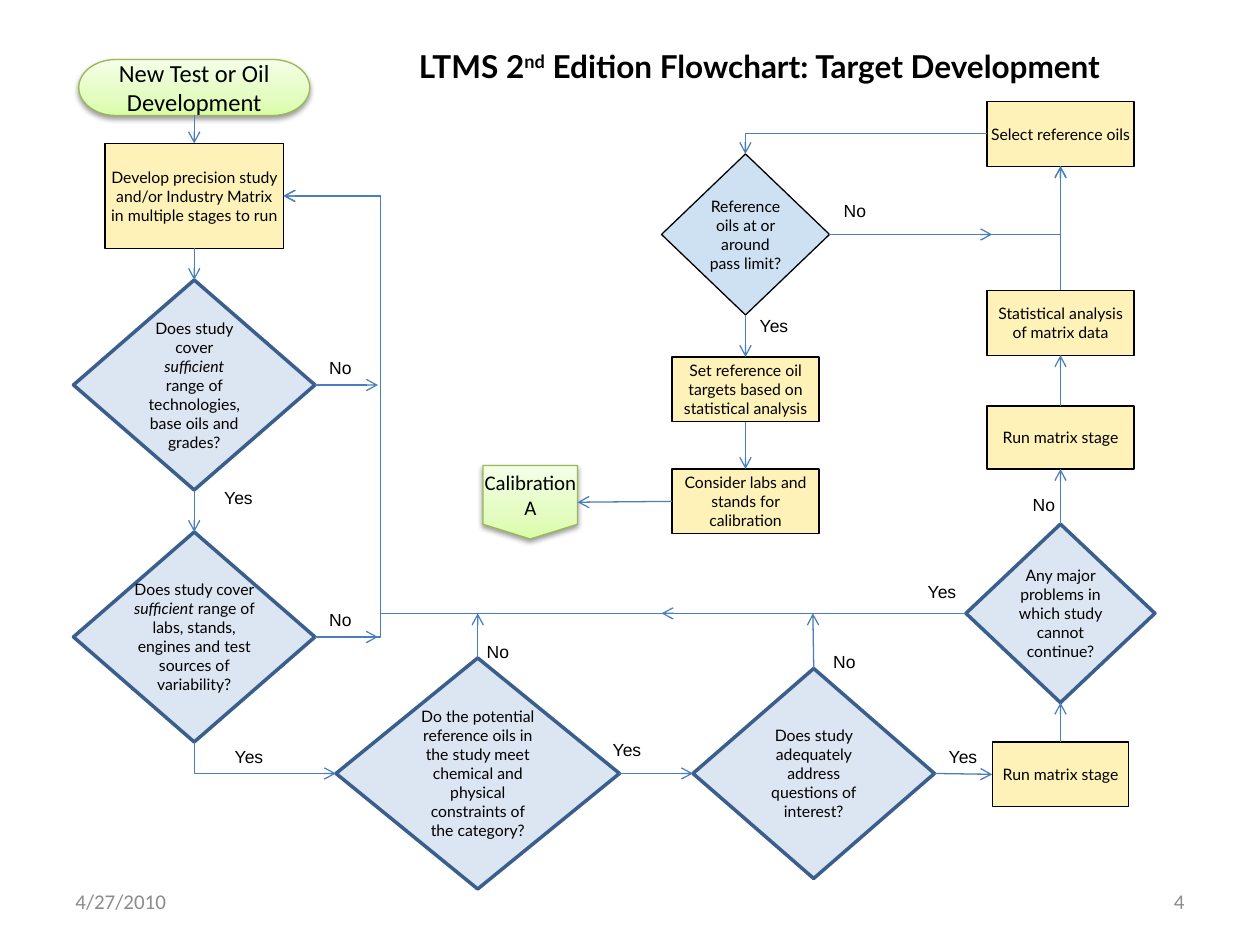
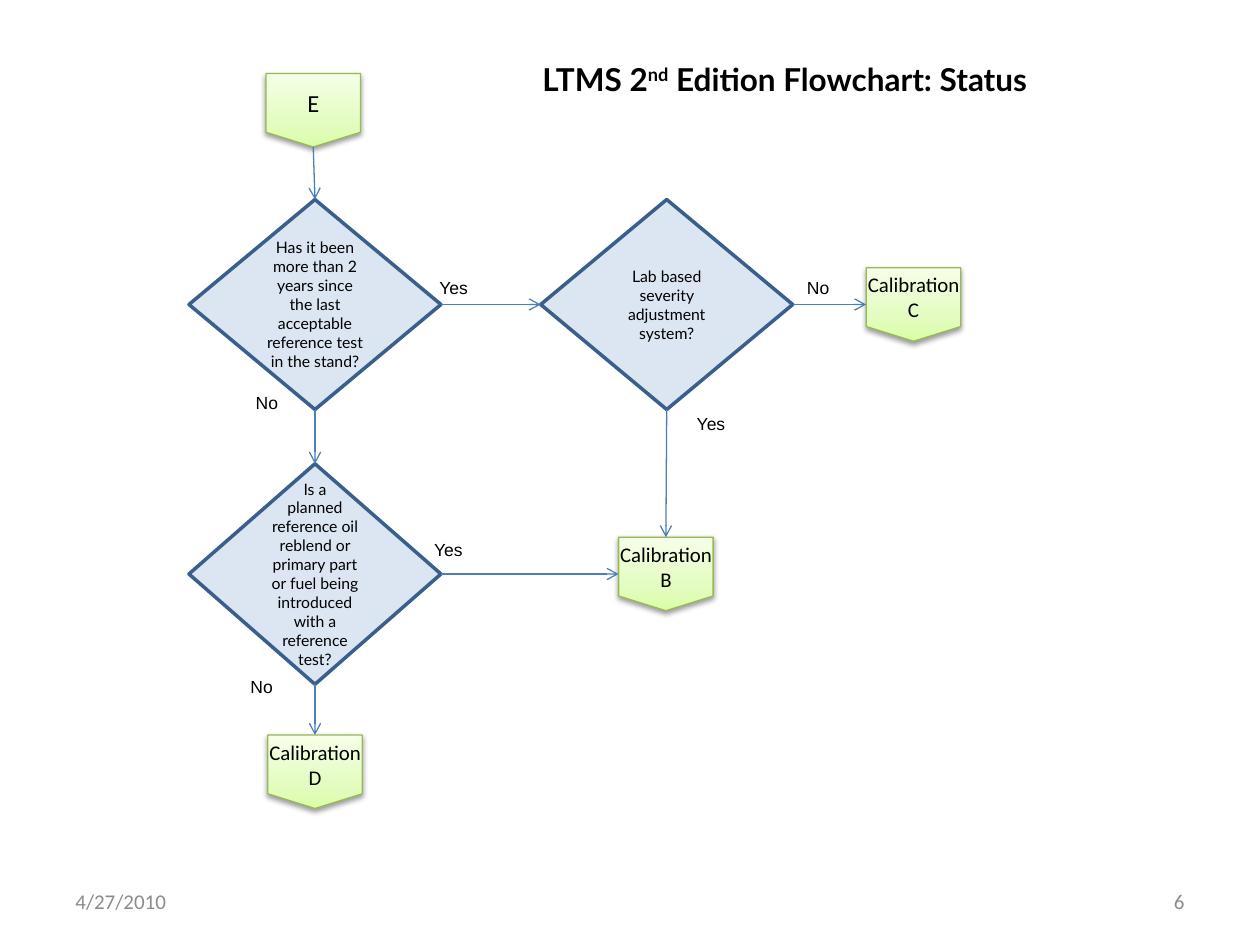
import dataclasses

import pptx
import pptx.dml.color
import pptx.enum.shapes
import pptx.enum.text
import pptx.oxml.ns
import pptx.util
from lxml import etree

Pt = pptx.util.Pt
qn = pptx.oxml.ns.qn
Kind = pptx.enum.shapes.MSO_SHAPE
Wire = pptx.enum.shapes.MSO_CONNECTOR
Align = pptx.enum.text.PP_ALIGN
Anchor = pptx.enum.text.MSO_ANCHOR

TOP, LEFT, BASE, RIGHT = range(4)


@dataclasses.dataclass(frozen=True)
class Theme:
    ink: str = "000000"
    paper: str = "FFFFFF"
    grey: str = "8C8C8C"
    wire: str = "4B7EBC"
    step: str = "FFF2B9"
    ask: str = "DCE6F2"
    edge: str = "3A5F8C"
    limit: str = "CEE1F2"
    rim: str = "98B955"
    green: tuple = ((0, "DAFDA7"), (35, "E4FCC2"), (100, "F5FFE7"))
    body: str = "Lato"
    port: str = "Calibri"
    tag: str = "Arial"
    head_size: float = 18
    port_size: float = 14
    exit_size: float = 11.9
    foot_size: float = 12
    tag_size: float = 10
    body_size: float = 9
    thin: float = 0.75
    thick: float = 2


THEME = Theme()
WIDE = (7.2, 3.6, 7.2, 3.6)
SNUG = (2.16, 1.44, 2.16, 1.44)
NONE = (0, 0, 0, 0)


def rgb(code):
    return pptx.dml.color.RGBColor.from_string(code)


def write(shape, text, font=THEME.body, size=THEME.body_size, color=THEME.ink,
          bold=False, mark="i", align=Align.CENTER, anchor=Anchor.MIDDLE, pad=WIDE):
    """Fill a shape with text; *starred* parts are italic or, with mark="sup", raised."""
    frame = shape.text_frame
    frame.word_wrap = True
    frame.vertical_anchor = anchor
    (frame.margin_left, frame.margin_top,
     frame.margin_right, frame.margin_bottom) = map(Pt, pad)
    for row, line in enumerate(text.split("\n")):
        para = frame.add_paragraph() if row else frame.paragraphs[0]
        para.alignment = align
        for spot, part in enumerate(line.split("*")):
            run = para.add_run()
            run.text = part
            run.font.name, run.font.size, run.font.bold = font, Pt(size), bold
            run.font.color.rgb = rgb(color)
            if spot % 2 and mark == "sup":
                run._r.get_or_add_rPr().set("baseline", "30000")
            elif spot % 2:
                run.font.italic = True


def block(slide, kind, box, fill=None, line=None, width=THEME.thin):
    shape = slide.shapes.add_shape(kind, *map(Pt, box))
    shape.shadow.inherit = False
    if fill:
        shape.fill.solid()
        shape.fill.fore_color.rgb = rgb(fill)
    if line:
        shape.line.color.rgb = rgb(line)
        shape.line.width = Pt(width)
    else:
        shape.line.fill.background()
    return shape


def note(slide, text, box, **style):
    write(slide.shapes.add_textbox(*map(Pt, box)), text, **style)


def tags(slide, text, *spots):
    """Put the same branch answer at several places."""
    for x, y in spots:
        note(slide, text, (x, y, 28.8, 14.4), font=THEME.tag, size=THEME.tag_size,
             align=Align.LEFT, anchor=Anchor.TOP, pad=(2.16, 2.16, 0, 0))


def step(slide, text, x, y, w=84, h=37):
    shape = block(slide, Kind.FLOWCHART_PROCESS, (x, y, w, h), THEME.step, THEME.ink)
    write(shape, text, pad=SNUG)
    return shape


def ask(slide, text, x, y, w=138, h=120, pad=WIDE,
        fill=THEME.ask, line=THEME.edge, width=THEME.thick):
    shape = block(slide, Kind.FLOWCHART_DECISION, (x, y, w, h), fill, line, width)
    write(shape, text, pad=pad)
    return shape


def port(slide, text, x, y, w=54, h=42, kind=Kind.FLOWCHART_OFFPAGE_CONNECTOR,
         size=THEME.port_size, pad=WIDE):
    """Green entry or exit sign with a gradient and a soft shadow."""
    shape = block(slide, kind, (x, y, w, h), line=THEME.rim)
    shape.fill.gradient()
    shape.fill.gradient_angle = 90
    props = shape._element.spPr
    stops = next(props.iter(qn("a:gsLst")))
    for stop in list(stops):
        stops.remove(stop)
    for place, code in THEME.green:
        stop = etree.SubElement(stops, qn("a:gs"), pos=str(place * 1000))
        etree.SubElement(stop, qn("a:srgbClr"), val=code)
    shade = etree.SubElement(
        props.find(qn("a:effectLst")), qn("a:outerShdw"), blurRad=str(Pt(3.1)),
        dist=str(Pt(1.6)), dir="5400000", rotWithShape="0")
    tint = etree.SubElement(shade, qn("a:srgbClr"), val=THEME.ink)
    etree.SubElement(tint, qn("a:alpha"), val="38000")
    write(shape, text, font=THEME.port, size=size, pad=pad)
    return shape


def leave(slide, name, x, y):
    return port(slide, "Calibration\n" + name, x, y, size=THEME.exit_size, pad=NONE)


def link(slide, start, end, corner=False, turn=None, tip="tailEnd"):
    """Join two (shape, side) pairs; end may also be an (x, y) point.

    corner bends the line once, turn is the x of a line that bends twice.
    """
    kind = Wire.ELBOW if corner or turn else Wire.STRAIGHT
    wire = slide.shapes.add_connector(kind, 0, 0, 0, 0)
    wire.begin_connect(*start)
    if isinstance(end[0], (int, float)):
        wire.end_x, wire.end_y = map(Pt, end)
    else:
        wire.end_connect(*end)
    wire.line.color.rgb = rgb(THEME.wire)
    wire.line.width = Pt(THEME.thin)
    props = wire._element.spPr
    etree.SubElement(props.find(qn("a:ln")), qn("a:" + tip), type="arrow")
    etree.SubElement(props, qn("a:effectLst"))
    shape = props.find(qn("a:prstGeom"))
    if corner:
        shape.set("prst", "bentConnector2")
    if turn:
        share = (Pt(turn) - wire.begin_x) / (wire.end_x - wire.begin_x)
        guides = shape.find(qn("a:avLst"))
        if guides is None:
            guides = etree.SubElement(shape, qn("a:avLst"))
        etree.SubElement(guides, qn("a:gd"), name="adj1",
                         fmla=f"val {round(share * 100000)}")


def chain(slide, side, back, *shapes):
    """Link each shape to the next, out of one side and in at the other."""
    for one, two in zip(shapes, shapes[1:]):
        link(slide, (one, side), (two, back))


def begin(deck, topic, box, number):
    """Add a slide with its title, date and number."""
    slide = deck.slides.add_slide(deck.slide_layouts[6])
    title = block(slide, Kind.RECTANGLE, box, THEME.paper)
    write(title, "LTMS 2*nd* Edition Flowchart: " + topic, size=THEME.head_size,
          bold=True, mark="sup", pad=(3.6, 2.88, 3.6, 2.88))
    for text, x, align in (("4/27/2010", 36, Align.LEFT), (number, 516, Align.RIGHT)):
        note(slide, text, (x, 500.5, 168, 28.5), font=THEME.port,
             size=THEME.foot_size, color=THEME.grey, align=align)
    return slide


def target(deck):
    slide = begin(deck, "Target Development", (171.5, 24.5, 525, 26), "4")
    loop, lane = 217.5, 350.5

    start = port(slide, "New Test or Oil Development", 45, 34, 132, 32,
                 kind=Kind.FLOWCHART_TERMINATOR)
    study = step(slide, "Develop precision study and/or Industry Matrix "
                 "in multiple stages to run", 60, 82, 102, 60)
    tech = ask(slide, "Does study cover *sufficient* range of technologies, "
               "base oils and grades?", 42, 160)
    labs = ask(slide, "Does study cover *sufficient* range of labs, stands, engines "
               "and test sources of variability?", 42, 304, pad=NONE)
    oils = ask(slide, "Do the potential reference oils in the study meet chemical and "
               "physical constraints of the category?", 192, 376, 162, 132)
    goals = ask(slide, "Does study adequately address questions of interest?", 396, 382)
    first = step(slide, "Run matrix stage", 567, 424, 78)
    faults = ask(slide, "Any major problems in which study cannot continue?",
                 552, 299.5, 108, 102, pad=(0, 3.6, 0, 3.6))
    stage = step(slide, "Run matrix stage", 564, 232, h=36)
    stats = step(slide, "Statistical analysis of matrix data", 564, 166)
    select = step(slide, "Select reference oils", 564, 58)
    limit = ask(slide, "Reference oils at or around pass limit?", 378, 88, 96, 92,
                pad=SNUG, fill=THEME.limit, line=THEME.ink, width=THEME.thin)
    goal = step(slide, "Set reference oil targets based on statistical analysis",
                384, 204)
    stands = step(slide, "Consider labs and stands for calibration", 384, 268)
    out = leave(slide, "A", 276, 266)

    chain(slide, BASE, TOP, start, study, tech, labs)
    chain(slide, RIGHT, LEFT, oils, goals, first)
    chain(slide, TOP, BASE, first, faults, stage, stats, select)
    chain(slide, BASE, TOP, limit, goal, stands)
    chain(slide, LEFT, RIGHT, stands, out)
    link(slide, (select, LEFT), (limit, TOP), corner=True)
    link(slide, (limit, RIGHT), (select, BASE), corner=True)
    link(slide, (oils, LEFT), (labs, BASE), corner=True, tip="headEnd")
    link(slide, (labs, RIGHT), (study, RIGHT), turn=loop)
    link(slide, (faults, LEFT), (study, RIGHT), turn=loop)
    for shape, side, spot in (
            (tech, RIGHT, (216, 220)), (labs, RIGHT, (216, 364)),
            (oils, TOP, (273, lane)), (goals, TOP, (464.5, lane)),
            (faults, LEFT, (378, lane)), (limit, RIGHT, (567, 134))):
        link(slide, (shape, side), spot)

    tags(slide, "No", (186, 202), (186, 346), (276, 364), (474, 370),
         (588, 280), (480, 112))
    tags(slide, "Yes", (126, 276), (132, 424), (348, 420), (540, 424),
         (528, 330), (432, 178))


def status(deck):
    slide = begin(deck, "Status", (285, 24, 327, 42), "6")

    entry = port(slide, "E", 152, 42)
    age = ask(slide, "Has it been more than 2 years since the last acceptable "
              "reference test in the stand?", 108, 114, 144)
    blend = ask(slide, "Is a\nplanned reference oil reblend or primary part or fuel "
                "being introduced with a reference test?", 108, 265, 144, 126)
    system = ask(slide, "Lab based severity adjustment system?", 309, 114, 144)
    exit_b = leave(slide, "B", 353.5, 307)
    exit_c = leave(slide, "C", 495, 153)
    exit_d = leave(slide, "D", 153, 420)

    chain(slide, BASE, TOP, entry, age, blend, exit_d)
    chain(slide, BASE, TOP, system, exit_b)
    chain(slide, RIGHT, LEFT, age, system, exit_c)
    chain(slide, RIGHT, LEFT, blend, exit_b)

    tags(slide, "No", (144, 222), (141, 384), (459, 156))
    tags(slide, "Yes", (249, 156), (246, 306), (396, 234))


def main():
    deck = pptx.Presentation()
    deck.slide_width, deck.slide_height = Pt(720), Pt(540)
    target(deck)
    status(deck)
    deck.save("out.pptx")


if __name__ == "__main__":
    main()
